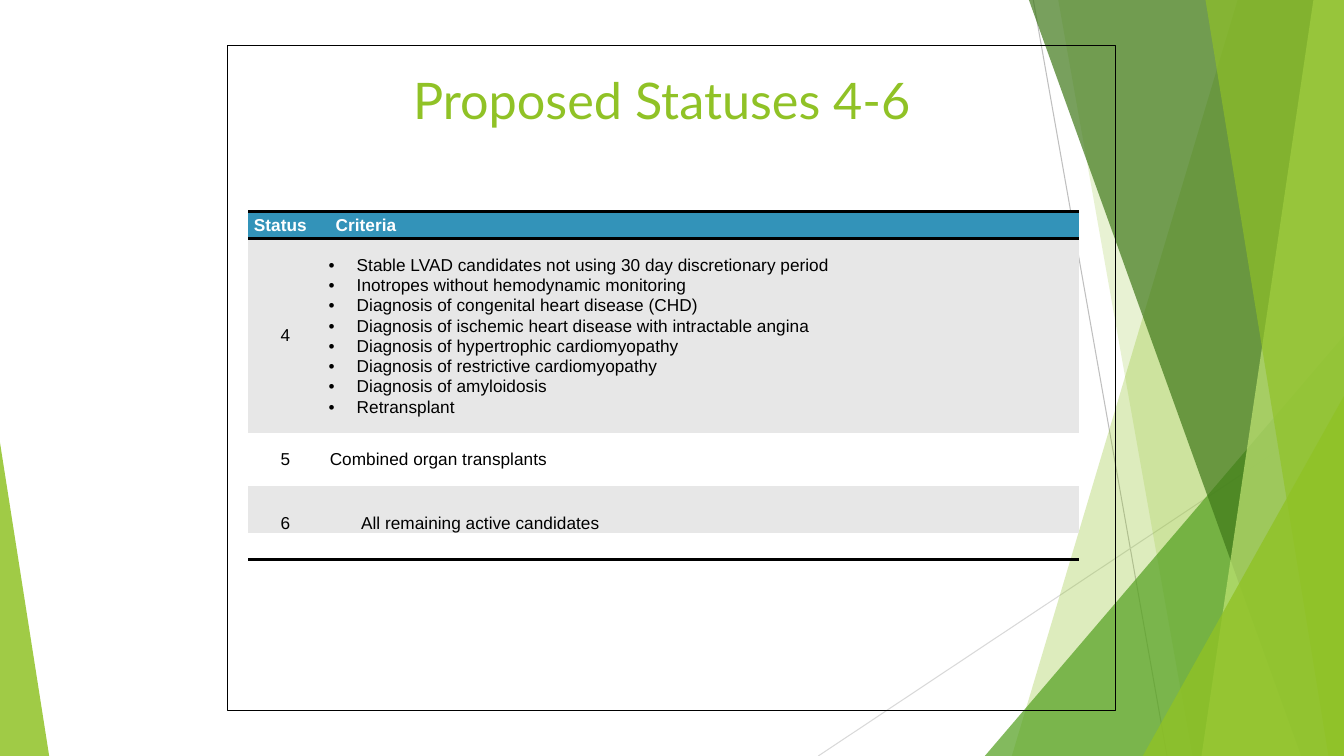
from dataclasses import dataclass

from lxml import etree
from pptx import Presentation
from pptx.dml.color import RGBColor
from pptx.enum import shapes, text
from pptx.oxml import ns
from pptx.util import Cm, Pt


@dataclass(frozen=True)
class Theme:
    """Colours, fonts and type sizes of the slide."""
    lime: str = "90C226"
    pale_lime: str = "C0E474"
    leaf: str = "54A021"
    forest: str = "3F7819"
    blue: str = "3393B9"
    band: str = "E7E7E7"
    black: str = "000000"
    white: str = "FFFFFF"
    light_grey: str = "D9D9D9"
    grey: str = "BFBFBF"
    title_font: str = "Lato"
    body_font: str = "Arial"
    title_size: float = 36
    body_size: float = 12.3


@dataclass(frozen=True)
class Line:
    """A straight line, in centimetres, with its weight in points."""
    x1: float
    y1: float
    x2: float
    y2: float
    color: str
    weight: float


@dataclass(frozen=True)
class Panel:
    """A full-height panel from a slanted left side to the right slide edge."""
    top_x: float
    bottom_x: float
    color: str
    opacity: int


@dataclass(frozen=True)
class Triangle:
    """A triangle standing on the bottom slide edge."""
    left: float
    top: float
    width: float
    apex: float
    color: str
    opacity: int


@dataclass(frozen=True)
class StatusRow:
    """One table row: a status, its criteria and their layout."""
    status: str
    criteria: tuple[str, ...]
    height: float
    indent: float
    fill: str | None
    anchor: text.MSO_ANCHOR = text.MSO_ANCHOR.MIDDLE
    header: bool = False


THEME = Theme()
WIDTH, HEIGHT = 33.87, 19.05
TABLE_LEFT, TABLE_TOP = 6.25, 5.33
COLUMNS = (1.88, 19.07)
CLOSING_RULE_Y = 14.1
NO_STYLE = "{2D5ABB26-0587-4C30-8999-92F81FD0307C}"

BACK_LINES = (
    Line(26.04, 0, 29.41, HEIGHT, THEME.grey, 0.75),
    Line(WIDTH, 10.24, 20.62, HEIGHT, THEME.light_grey, 0.75),
)
DECORATION = (
    Panel(31.19, 25.5, THEME.lime, 30),
    Panel(26.67, 30.05, THEME.lime, 20),
    Triangle(24.82, 8.46, 9.05, 1, THEME.leaf, 72),
    Panel(25.93, 32.79, THEME.forest, 70),
    Panel(33.1, 30.28, THEME.pale_lime, 70),
    Panel(30.38, 33.48, THEME.lime, 65),
    Triangle(28.8, 9.98, 5.07, 1, THEME.lime, 80),
    Triangle(0, 11.15, 1.24, 0, THEME.lime, 85),
)
ROWS = (
    StatusRow("Status", ("Criteria",), 0.69, 0.33, THEME.blue, header=True),
    StatusRow("4", (
        "Stable LVAD candidates not using 30 day discretionary period",
        "Inotropes without hemodynamic monitoring",
        "Diagnosis of congenital heart disease (CHD)",
        "Diagnosis of ischemic heart disease with intractable angina",
        "Diagnosis of hypertrophic cardiomyopathy",
        "Diagnosis of restrictive cardiomyopathy",
        "Diagnosis of amyloidosis",
        "Retransplant",
    ), 4.88, 0.15, THEME.band),
    StatusRow("5", ("Combined organ transplants",), 1.35, 0.18, None),
    StatusRow("6", ("All remaining active candidates",), 1.19, 0.97,
              THEME.band, text.MSO_ANCHOR.BOTTOM),
)


def add_line(slide, line: Line) -> None:
    """Draw a straight line without a shadow."""
    connector = slide.shapes.add_connector(
        shapes.MSO_CONNECTOR.STRAIGHT,
        Cm(line.x1), Cm(line.y1), Cm(line.x2), Cm(line.y2))
    connector.line.color.rgb = RGBColor.from_string(line.color)
    connector.line.width = Pt(line.weight)
    etree.SubElement(connector._element.spPr, ns.qn("a:effectLst"))


def add_decoration(slide, item: Panel | Triangle) -> None:
    """Draw a translucent panel or triangle."""
    if isinstance(item, Panel):
        builder = slide.shapes.build_freeform(Cm(item.top_x), 0)
        builder.add_line_segments([
            (Cm(WIDTH), 0), (Cm(WIDTH), Cm(HEIGHT)), (Cm(item.bottom_x), Cm(HEIGHT))])
        shape = builder.convert_to_shape()
    else:
        shape = slide.shapes.add_shape(
            shapes.MSO_SHAPE.ISOSCELES_TRIANGLE, Cm(item.left), Cm(item.top),
            Cm(item.width), Cm(HEIGHT - item.top))
        shape.adjustments[0] = item.apex
    shape.shadow.inherit = False
    shape.line.fill.background()
    shape.fill.solid()
    shape.fill.fore_color.rgb = RGBColor.from_string(item.color)
    color = shape._element.spPr.find(".//" + ns.qn("a:srgbClr"))
    etree.SubElement(color, ns.qn("a:alpha"), val=str(item.opacity * 1000))


def style_font(paragraph, name: str, size: float, color: str, bold: bool = False) -> None:
    """Set the font of a whole paragraph."""
    paragraph.font.name = name
    paragraph.font.size = Pt(size)
    paragraph.font.bold = bold
    paragraph.font.color.rgb = RGBColor.from_string(color)


def add_bullet(paragraph) -> None:
    """Give a paragraph a hanging round bullet."""
    properties = paragraph._p.get_or_add_pPr()
    properties.set("marL", str(Cm(0.71)))
    properties.set("indent", str(-Cm(0.71)))
    etree.SubElement(properties, ns.qn("a:buFont"), typeface=THEME.body_font)
    etree.SubElement(properties, ns.qn("a:buChar"), char="•")


def fill_cell(cell, row: StatusRow, lines: tuple[str, ...], indent: float, centred: bool) -> None:
    """Write lines into a table cell and set its look."""
    cell.margin_left = Cm(indent)
    cell.margin_right = cell.margin_top = cell.margin_bottom = 0
    cell.vertical_anchor = row.anchor
    if row.fill:
        cell.fill.solid()
        cell.fill.fore_color.rgb = RGBColor.from_string(row.fill)
    else:
        cell.fill.background()
    cell.text_frame.text = "\n".join(lines)
    for paragraph in cell.text_frame.paragraphs:
        paragraph.alignment = text.PP_ALIGN.CENTER if centred else text.PP_ALIGN.LEFT
        if len(lines) > 1:
            paragraph.line_spacing = 1.05
            add_bullet(paragraph)
        style_font(paragraph, THEME.body_font, THEME.body_size,
                   THEME.white if row.header else THEME.black, row.header)


def add_status_table(slide) -> None:
    """Draw the status table and its horizontal rules."""
    table = slide.shapes.add_table(
        len(ROWS), len(COLUMNS), Cm(TABLE_LEFT), Cm(TABLE_TOP),
        Cm(sum(COLUMNS)), Cm(sum(row.height for row in ROWS))).table
    table.horz_banding = False
    table._tbl.tblPr.find(ns.qn("a:tableStyleId")).text = NO_STYLE
    for column, width in zip(table.columns, COLUMNS):
        column.width = Cm(width)
    for index, row in enumerate(ROWS):
        table.rows[index].height = Cm(row.height)
        fill_cell(table.cell(index, 0), row, (row.status,),
                  0.15 if row.header else 0, not row.header)
        fill_cell(table.cell(index, 1), row, row.criteria, row.indent, False)
    for y in (TABLE_TOP, TABLE_TOP + ROWS[0].height, CLOSING_RULE_Y):
        add_line(slide, Line(TABLE_LEFT, y, TABLE_LEFT + sum(COLUMNS), y, THEME.black, 2))


def add_title(slide) -> None:
    """Write the slide title."""
    frame = slide.shapes.add_textbox(Cm(10.41), Cm(1.73), Cm(13.49), Cm(1.57)).text_frame
    frame.word_wrap = True
    frame.margin_left = frame.margin_right = frame.margin_top = frame.margin_bottom = 0
    frame.text = "Proposed Statuses 4-6"
    style_font(frame.paragraphs[0], THEME.title_font, THEME.title_size, THEME.lime)


def add_frame(slide) -> None:
    """Draw the thin outline around the content."""
    shape = slide.shapes.add_shape(
        shapes.MSO_SHAPE.RECTANGLE, Cm(5.74), Cm(1.14), Cm(22.38), Cm(16.76))
    shape.shadow.inherit = False
    shape.fill.background()
    shape.line.color.rgb = RGBColor.from_string(THEME.black)
    shape.line.width = Pt(0.96)


def main() -> None:
    """Build and save the presentation."""
    presentation = Presentation()
    presentation.slide_width, presentation.slide_height = Cm(WIDTH), Cm(HEIGHT)
    slide = presentation.slides.add_slide(presentation.slide_layouts[6])
    for line in BACK_LINES:
        add_line(slide, line)
    for item in DECORATION:
        add_decoration(slide, item)
    add_title(slide)
    add_status_table(slide)
    add_frame(slide)
    presentation.save("out.pptx")


if __name__ == "__main__":
    main()
